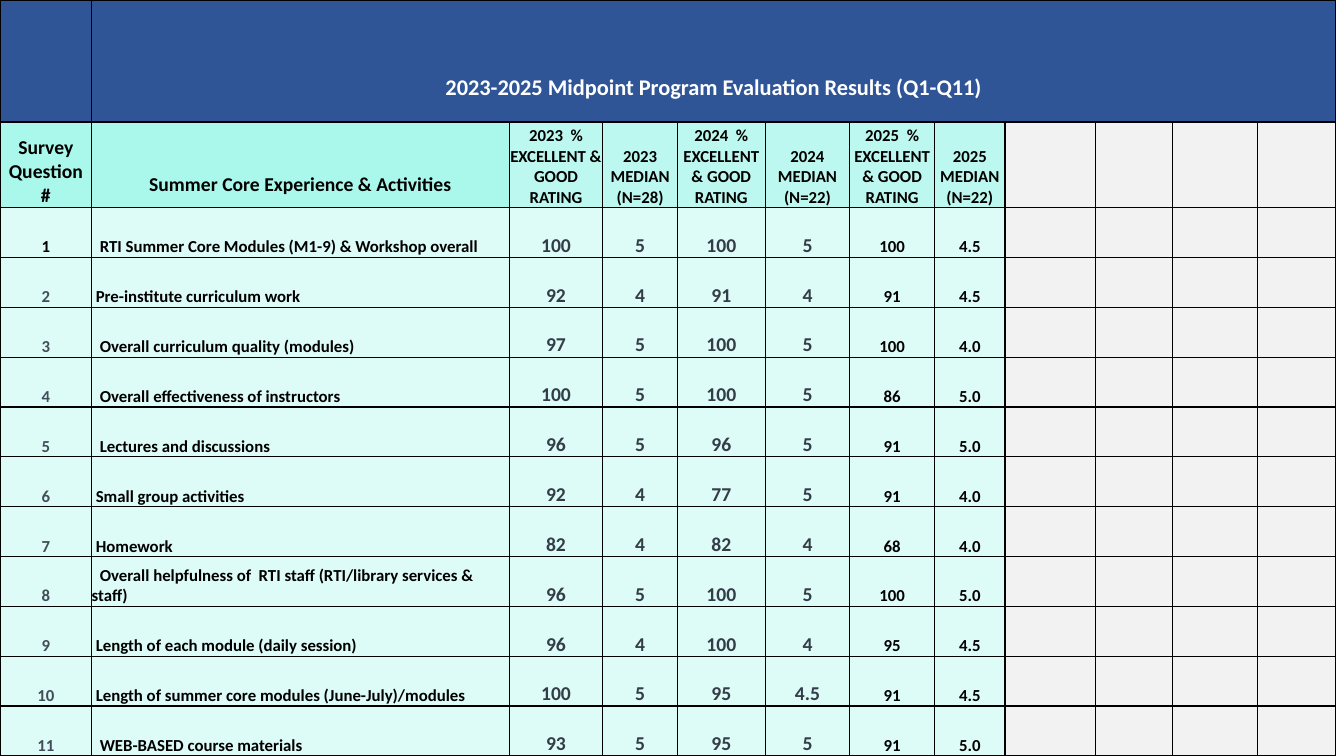
from pptx import Presentation
from pptx.dml.color import RGBColor
from pptx.enum.text import MSO_ANCHOR, PP_ALIGN
from pptx.oxml import parse_xml
from pptx.oxml.ns import nsdecls
from pptx.util import Inches, Pt

SLIDE_WIDTH, SLIDE_HEIGHT = 13.33, 7.5
COLUMN_WIDTHS = [0.91, 4.14, 0.93, 0.74, 0.87, 0.84, 0.84, 0.7, 0.9, 0.76, 0.84, 0.78]
TITLE_HEIGHT, HEADER_HEIGHT = 1.21, 0.85
NAVY, MINT, GREY = "2F5597", "AAF7EB", "F2F2F2"
BLACK, WHITE, SLATE, STEEL = "000000", "FFFFFF", "333D48", "424E59"
HEADER_OPACITY, BODY_OPACITY = 79, 40
WIDE_INDENT, NARROW_INDENT = 0.08, 0.04

TITLE = "2023-2025 Midpoint Program Evaluation Results (Q1-Q11)"
HEADERS = [
    "Survey\nQuestion\n#",
    "Summer Core Experience & Activities",
    "2023  % EXCELLENT & GOOD RATING",
    "2023 MEDIAN (N=28)",
    "2024  % EXCELLENT & GOOD RATING",
    "2024 MEDIAN (N=22)",
    "2025  % EXCELLENT & GOOD RATING",
    "2025\nMEDIAN (N=22)",
]
RESULTS = [
    ("RTI Summer Core Modules (M1-9) & Workshop overall", WIDE_INDENT, "100 5 100 5 100 4.5"),
    ("Pre-institute curriculum work", NARROW_INDENT, "92 4 91 4 91 4.5"),
    ("Overall curriculum quality (modules)", WIDE_INDENT, "97 5 100 5 100 4.0"),
    ("Overall effectiveness of instructors", WIDE_INDENT, "100 5 100 5 86 5.0"),
    ("Lectures and discussions", WIDE_INDENT, "96 5 96 5 91 5.0"),
    ("Small group activities", NARROW_INDENT, "92 4 77 5 91 4.0"),
    ("Homework", NARROW_INDENT, "82 4 82 4 68 4.0"),
    ("Overall helpfulness of  RTI staff (RTI/library services & staff)", WIDE_INDENT, "96 5 100 5 100 5.0"),
    ("Length of each module (daily session)", NARROW_INDENT, "96 4 100 4 95 4.5"),
    ("Length of summer core modules (June-July)/modules", NARROW_INDENT, "100 5 95 4.5 91 4.5"),
    ("WEB-BASED course materials", WIDE_INDENT, "93 5 95 5 91 5.0"),
]


def color(value):
    """Return the colour for a hex string."""
    return RGBColor.from_string(value)


def apply_format(target, values):
    """Set every attribute in values on the target."""
    for name, value in values.items():
        setattr(target, name, value)


def style_cell(cell, fill, opacity=100):
    """Give a cell black borders and a fill of the given opacity."""
    properties = cell._tc.get_or_add_tcPr()
    for side in ("lnL", "lnR", "lnT", "lnB"):
        properties.append(parse_xml(
            f'<a:{side} {nsdecls("a")} w="12700"><a:solidFill>'
            f'<a:srgbClr val="{BLACK}"/></a:solidFill></a:{side}>'))
    cell.fill.solid()
    cell.fill.fore_color.rgb = color(fill)
    if opacity < 100:
        rgb = next(properties.find("{*}solidFill").iterchildren())
        rgb.append(parse_xml(f'<a:alpha {nsdecls("a")} val="{opacity * 1000}"/>'))


def write_cell(cell, text, size=12, font_color=BLACK, alignment=PP_ALIGN.CENTER, indent=0, margin=0, bottom=0):
    """Write bold, bottom-anchored text into a cell."""
    apply_format(cell, {
        "vertical_anchor": MSO_ANCHOR.BOTTOM,
        "margin_left": Inches(margin),
        "margin_right": Inches(margin),
        "margin_top": Inches(margin),
        "margin_bottom": Inches(bottom),
    })
    cell.text_frame.text = text
    for paragraph in cell.text_frame.paragraphs:
        paragraph.alignment = alignment
        if indent:
            properties = paragraph._p.get_or_add_pPr()
            properties.set("marL", "0")
            properties.set("indent", str(Inches(indent)))
        for run in paragraph.runs:
            apply_format(run.font, {"name": "Calibri", "size": Pt(size), "bold": True})
            run.font.color.rgb = color(font_color)


def fill_title(table):
    """Fill the banner row, merged from the second column on."""
    for cell in table.rows[0].cells:
        style_cell(cell, NAVY)
    banner = table.cell(0, 1)
    banner.merge(table.cell(0, len(COLUMN_WIDTHS) - 1))
    write_cell(banner, TITLE, size=16, font_color=WHITE, bottom=0.2)


def fill_headers(table):
    """Fill the row of column headings."""
    for column, text in enumerate(HEADERS):
        cell = table.cell(1, column)
        is_label = column < 2
        style_cell(cell, MINT, 100 if is_label else HEADER_OPACITY)
        write_cell(cell, text, size=14 if is_label else 12, bottom=0.11 if column == 1 else 0)


def fill_results(table):
    """Fill one row for each survey question."""
    for number, (activity, indent, ratings) in enumerate(RESULTS, start=1):
        cells = list(table.rows[number + 1].cells)[:len(HEADERS)]
        for cell in cells:
            style_cell(cell, MINT, BODY_OPACITY)
        write_cell(cells[0], str(number), font_color=BLACK if number == 1 else STEEL)
        write_cell(cells[1], activity, alignment=PP_ALIGN.LEFT, indent=indent)
        for position, (cell, rating) in enumerate(zip(cells[2:], ratings.split())):
            if position < 4:
                write_cell(cell, rating, size=14, font_color=SLATE, margin=0.01)
            else:
                write_cell(cell, rating)


def fill_spare_columns(table):
    """Shade the unused columns below the banner."""
    for row in list(table.rows)[1:]:
        for cell in list(row.cells)[len(HEADERS):]:
            style_cell(cell, GREY)


def add_results_table(slide, left, top, height):
    """Add the evaluation table in the given box."""
    row_count = len(RESULTS) + 2
    shape = slide.shapes.add_table(
        row_count, len(COLUMN_WIDTHS), Inches(left), Inches(top),
        Inches(sum(COLUMN_WIDTHS)), Inches(height))
    table = shape.table
    apply_format(table, {"first_row": False, "horz_banding": False})
    for column, width in zip(table.columns, COLUMN_WIDTHS):
        column.width = Inches(width)
    result_height = (height - TITLE_HEIGHT - HEADER_HEIGHT) / len(RESULTS)
    heights = [TITLE_HEIGHT, HEADER_HEIGHT] + [result_height] * len(RESULTS)
    for row, row_height in zip(table.rows, heights):
        row.height = Inches(row_height)
    fill_title(table)
    fill_headers(table)
    fill_results(table)
    fill_spare_columns(table)


def main():
    """Build and save the presentation."""
    presentation = Presentation()
    apply_format(presentation, {"slide_width": Inches(SLIDE_WIDTH), "slide_height": Inches(SLIDE_HEIGHT)})
    slide = presentation.slides.add_slide(presentation.slide_layouts[6])
    add_results_table(slide, 0, 0, SLIDE_HEIGHT)
    presentation.save("out.pptx")


if __name__ == "__main__":
    main()
